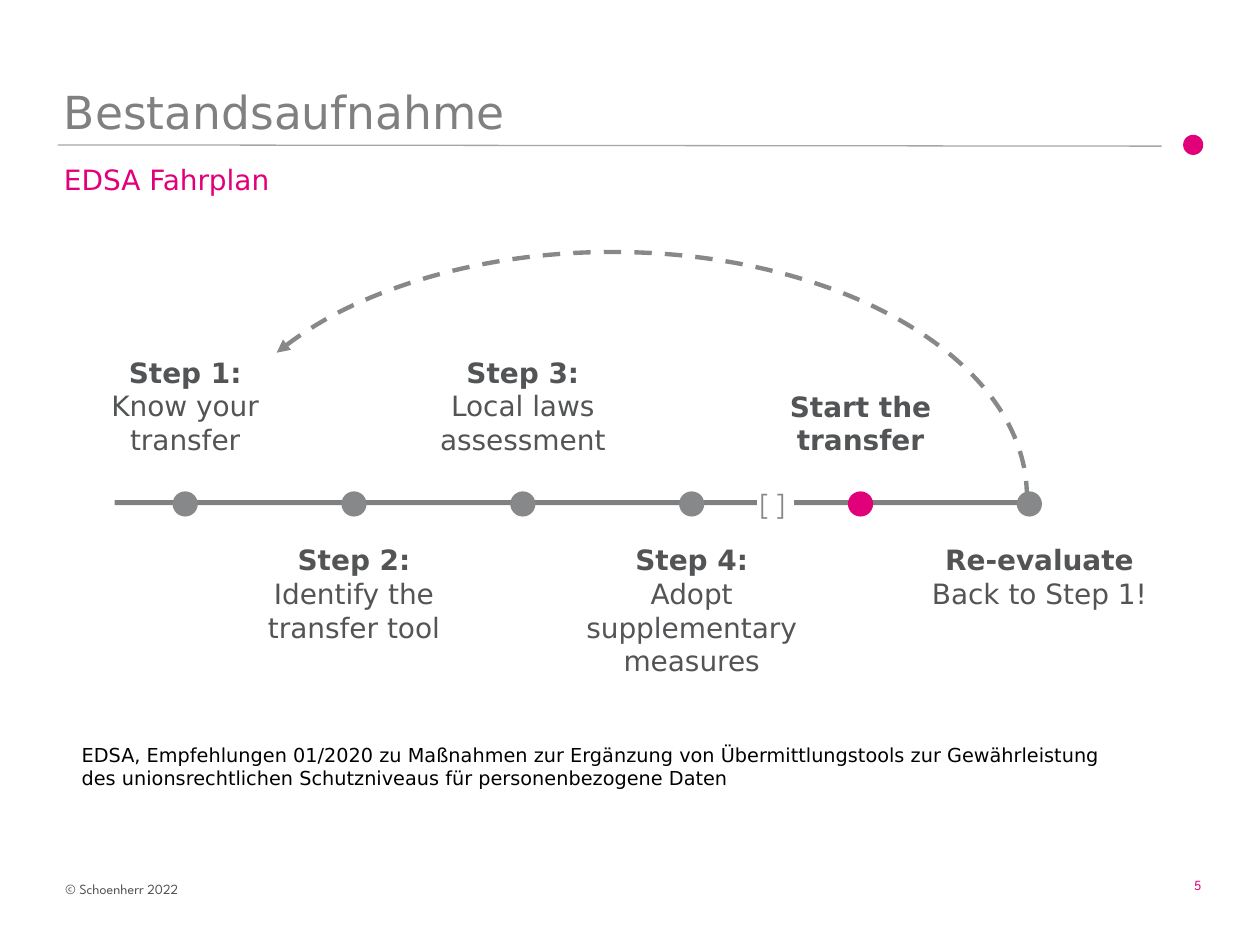
"""Build the EDSA roadmap slide with its six-point timeline."""
from dataclasses import dataclass

from lxml.etree import SubElement
from pptx import Presentation
from pptx.dml.color import RGBColor
from pptx.enum.dml import MSO_LINE
from pptx.enum.shapes import MSO_CONNECTOR, MSO_SHAPE
from pptx.enum.text import MSO_ANCHOR, PP_ALIGN
from pptx.oxml.ns import qn
from pptx.util import Inches, Pt

COLORS = {"pink": "E2007A", "dot": "878889", "gray": "808080", "rule": "A6A6A6",
          "text": "535455", "black": "000000", "white": "FFFFFF"}
SANS, SPARTAN = "DejaVu Sans", "League Spartan"
FIRST_X, PITCH, DOT, AXIS_Y = 1.47, 1.34, 0.2, 4.0


@dataclass
class Line:
    text: str
    size: float
    color: str
    font: str = SANS
    bold: bool = False
    align: PP_ALIGN = PP_ALIGN.LEFT


@dataclass
class Step:
    heading: str
    detail: str
    top: float
    height: float
    color: str = "dot"
    detail_bold: bool = False
    width: float = 2.13
    shift: float = 0


STEPS = [
    Step("Step 1:", "Know your transfer", 2.77, 1.21),
    Step("Step 2:", "Identify the transfer tool", 4.26, 0.91),
    Step("Step 3:", "Local laws assessment", 2.77, 1.18),
    Step("Step 4:", "Adopt supplementary measures", 4.26, 1.45),
    Step("Start the", "transfer", 3.04, 0.91, color="pink", detail_bold=True),
    Step("Re-evaluate", "Back to Step 1!", 4.26, 0.64, width=2.28, shift=0.08),
]


def rgb(name: str) -> RGBColor:
    """Return the named colour."""
    return RGBColor.from_string(COLORS[name])


def write(tf, lines: list[Line], wrap: bool = True) -> None:
    """Fill a text frame with one paragraph per line."""
    tf.word_wrap = wrap
    for i, line in enumerate(lines):
        p = tf.add_paragraph() if i else tf.paragraphs[0]
        p.text = line.text
        p.alignment = line.align
        p.font.name = line.font
        p.font.size = Pt(line.size)
        p.font.bold = line.bold
        p.font.color.rgb = rgb(line.color)


def add_text(s, x: float, y: float, w: float, h: float, *lines: Line, wrap: bool = True):
    """Add a text box and return its text frame."""
    tf = s.shapes.add_textbox(Inches(x), Inches(y), Inches(w), Inches(h)).text_frame
    write(tf, list(lines), wrap)
    return tf


def add_block(s, kind: MSO_SHAPE, x: float, y: float, w: float, h: float, color: str):
    """Add a filled shape without outline or shadow."""
    sp = s.shapes.add_shape(kind, Inches(x), Inches(y), Inches(w), Inches(h))
    sp.shadow.inherit = False
    sp.fill.solid()
    sp.fill.fore_color.rgb = rgb(color)
    sp.line.fill.background()
    return sp


def add_header(s) -> None:
    """Add the title, its rule and dot, and the subtitle."""
    rule = s.shapes.add_connector(MSO_CONNECTOR.STRAIGHT, Inches(0.46), Inches(1.15),
                                  Inches(9.22), Inches(1.16))
    rule.line.color.rgb = rgb("rule")
    rule.line.width = Pt(0.75)
    SubElement(rule._element.spPr, qn("a:effectLst"))
    add_block(s, MSO_SHAPE.OVAL, 9.39, 1.07, 0.16, 0.16, "pink")
    add_text(s, 0.41, 1.24, 8.86, 4.91, Line("EDSA Fahrplan", 16, "pink"))
    title = add_text(s, 0.41, 0.6, 8.86, 0.55, Line("Bestandsaufnahme", 26, "gray"))
    title.vertical_anchor = MSO_ANCHOR.BOTTOM


def add_step(s, step: Step, x: float) -> None:
    """Add a timeline dot centred on x with its label."""
    add_block(s, MSO_SHAPE.OVAL, x - DOT / 2, AXIS_Y - DOT / 2, DOT, DOT, step.color)
    add_text(s, x + step.shift - step.width / 2, step.top, step.width, step.height,
             Line(step.heading, 16, "text", bold=True, align=PP_ALIGN.CENTER),
             Line(step.detail, 16, "text", bold=step.detail_bold, align=PP_ALIGN.CENTER))


def add_gap(s) -> None:
    """Add the bracketed break in the timeline."""
    sp = add_block(s, MSO_SHAPE.RECTANGLE, 6.01, 3.8, 0.29, 0.37, "white")
    tf = sp.text_frame
    tf.margin_left, tf.margin_right = Inches(0.02), 0
    write(tf, [Line("[ ]", 16, "dot", SPARTAN)])


def add_return_arc(s) -> None:
    """Add the dashed arc leading back to the first step."""
    arc = s.shapes.add_shape(MSO_SHAPE.ARC, Inches(1.57), Inches(2), Inches(6.58), Inches(3.87))
    arc.adjustments[0], arc.adjustments[1] = 121.85, 0.1
    arc.shadow.inherit = False
    arc.fill.background()
    arc.line.color.rgb = rgb("dot")
    arc.line.width = Pt(2.5)
    arc.line.dash_style = MSO_LINE.DASH
    SubElement(arc.line._get_or_add_ln(), qn("a:headEnd"), type="triangle")


def main() -> None:
    """Build and save the slide."""
    prs = Presentation()
    prs.slide_width, prs.slide_height = Inches(10), Inches(7.5)
    s = prs.slides.add_slide(prs.slide_layouts[6])
    add_text(s, 9.38, 6.91, 0.34, 0.24, Line("5", 8, "pink", SPARTAN), wrap=False)
    add_text(s, 0.42, 6.94, 2.2, 0.24, Line("© Schoenherr 2022", 8, "text", SPARTAN))
    add_header(s)
    add_block(s, MSO_SHAPE.RECTANGLE, 0.91, 3.97, FIRST_X + 5 * PITCH - 0.91, 0.04, "gray")
    for i, step in enumerate(STEPS):
        add_step(s, step, FIRST_X + i * PITCH)
    add_gap(s)
    add_return_arc(s)
    add_text(s, 0.55, 5.85, 8.4, 0.47, Line(
        "EDSA, Empfehlungen 01/2020 zu Maßnahmen zur Ergänzung von Übermittlungstools "
        "zur Gewährleistung des unionsrechtlichen Schutzniveaus für personenbezogene Daten",
        11, "black"))
    prs.save("out.pptx")


if __name__ == "__main__":
    main()
